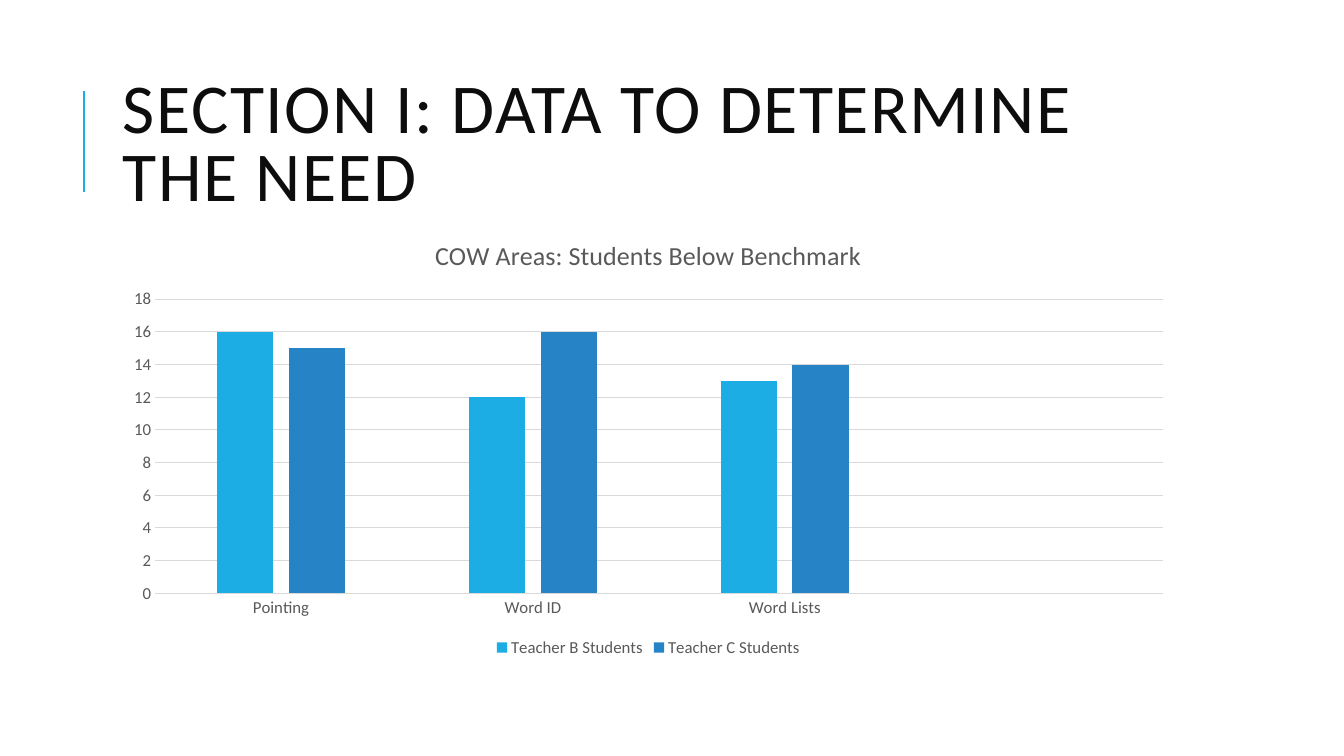
from lxml import etree
from pptx import Presentation
from pptx.chart.data import CategoryChartData
from pptx.dml.color import RGBColor
from pptx.enum.chart import XL_CHART_TYPE, XL_LEGEND_POSITION, XL_TICK_MARK
from pptx.enum.shapes import MSO_CONNECTOR
from pptx.enum.text import MSO_ANCHOR, MSO_AUTO_SIZE, PP_ALIGN
from pptx.oxml.ns import qn
from pptx.util import Cm, Pt

COLUMNS = XL_CHART_TYPE.COLUMN_CLUSTERED
LEGEND_BOTTOM = XL_LEGEND_POSITION.BOTTOM
NO_TICK = XL_TICK_MARK.NONE
STRAIGHT = MSO_CONNECTOR.STRAIGHT
MIDDLE = MSO_ANCHOR.MIDDLE
NO_AUTOFIT = MSO_AUTO_SIZE.NONE
LEFT = PP_ALIGN.LEFT

FONT = "Calibri"
INK, GREY, GRID = "0D0D0D", "595959", "D9D9D9"
CONTENT_LEFT, CONTENT_WIDTH = Cm(2.84), Cm(27)

CATEGORIES = ["Pointing", "Word ID", "Word Lists", ""]
SERIES = [
    ("Teacher B Students", [16, 12, 13, None], "1CADE4"),
    ("Teacher C Students", [15, 16, 14, None], "2683C6"),
]


def rgb(color):
    return RGBColor.from_string(color)


def set_attrs(obj, values):
    for name, value in values.items():
        setattr(obj, name, value)


def format_font(font, size, color):
    set_attrs(font, {"name": FONT, "size": Pt(size), "bold": False})
    font.color.rgb = rgb(color)


def format_line(line, color, width):
    line.color.rgb = rgb(color)
    line.width = Pt(width)


def add_accent_line(s, x, top, bottom):
    line = s.shapes.add_connector(STRAIGHT, x, bottom, x, top)
    format_line(line.line, "1CADE4", 1.5)
    etree.SubElement(line._element.spPr, qn("a:effectLst"))


def add_title(s, text):
    sp = s.shapes.title
    set_attrs(sp, {"left": CONTENT_LEFT, "top": Cm(1.63),
                   "width": CONTENT_WIDTH, "height": Cm(4.17)})
    tf = sp.text_frame
    set_attrs(tf, {"word_wrap": True, "auto_size": NO_AUTOFIT,
                   "vertical_anchor": MIDDLE})
    p = tf.paragraphs[0]
    set_attrs(p, {"alignment": LEFT, "line_spacing": 0.8})
    r = p.add_run()
    r.text = text
    format_font(r.font, 50, INK)
    r.font._element.set("spc", "100")


def format_axis(axis):
    set_attrs(axis, {"major_tick_mark": NO_TICK, "minor_tick_mark": NO_TICK})
    format_font(axis.tick_labels.font, 12, GREY)


def add_column_chart(s, title):
    data = CategoryChartData()
    data.categories = CATEGORIES
    for name, values, _ in SERIES:
        data.add_series(name, values)
    chart = s.shapes.add_chart(COLUMNS, CONTENT_LEFT, Cm(5.49),
                               CONTENT_WIDTH, Cm(11.18), data).chart
    format_font(chart.font, 10, "000000")

    # Chart title and legend
    tf = chart.chart_title.text_frame
    tf.text = title
    format_font(tf.paragraphs[0].runs[0].font, 18.6, GREY)
    chart.has_legend = True
    set_attrs(chart.legend, {"position": LEGEND_BOTTOM,
                             "include_in_layout": False})
    format_font(chart.legend.font, 12, GREY)

    # Columns
    plot = chart.plots[0]
    set_attrs(plot, {"gap_width": 219, "overlap": -27,
                     "vary_by_categories": False})
    for series, (_, _, color) in zip(plot.series, SERIES):
        series.format.fill.solid()
        series.format.fill.fore_color.rgb = rgb(color)

    # Axes
    category, value = chart.category_axis, chart.value_axis
    for axis in (category, value):
        format_axis(axis)
    format_line(category.format.line, GRID, 0.75)
    set_attrs(value, {"minimum_scale": 0, "maximum_scale": 18,
                      "major_unit": 2, "has_major_gridlines": True})
    value.format.line.fill.background()
    format_line(value.major_gridlines.format.line, GRID, 0.75)


def main():
    prs = Presentation()
    set_attrs(prs, {"slide_width": Cm(33.87), "slide_height": Cm(19.05)})
    s = prs.slides.add_slide(prs.slide_layouts.get_by_name("Title Only"))
    add_accent_line(s, Cm(2.11), Cm(2.29), Cm(4.83))
    add_title(s, "SECTION I: DATA TO DETERMINE THE NEED")
    add_column_chart(s, "COW Areas: Students Below Benchmark")
    prs.save("out.pptx")


if __name__ == "__main__":
    main()
